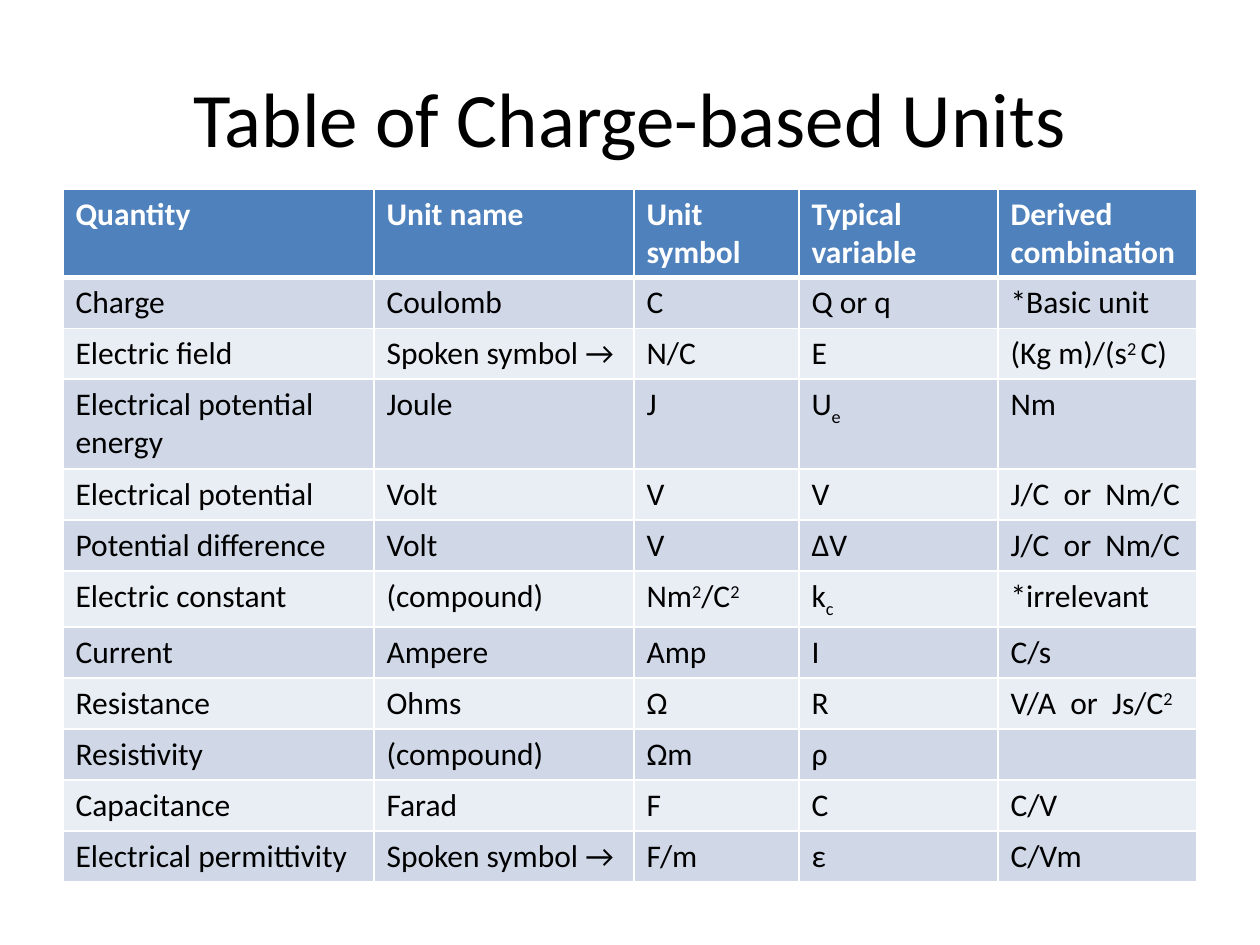
from pptx import Presentation
from pptx.dml.color import RGBColor
from pptx.enum.text import MSO_ANCHOR as Anchor, PP_ALIGN as Align
from pptx.oxml.ns import qn
from pptx.util import Pt
from lxml.etree import SubElement

PX = 914400 // 126
WHITE, BLACK, BLUE = "FFFFFF", "000000", "4F81BD"
BANDS = ("D0D8E8", "E9EDF4")
BASELINES = {"^": "30000", "_": "-25000"}

COLUMN_WIDTHS = (311, 260, 165, 199, 199)
ROW_HEIGHT = 51
TALL_ROWS = {0: 88, 3: 90, 6: 56}
UNITS = (
    ("Quantity", "Unit name", "Unit symbol", "Typical variable", "Derived combination"),
    ("Charge", "Coulomb", "C", "Q or q", "*Basic unit"),
    ("Electric field", "Spoken symbol →", "N/C", "E", "(Kg m)/(s|^2 |C)"),
    ("Electrical potential energy", "Joule", "J", "U|_e", "Nm"),
    ("Electrical potential", "Volt", "V", "V", "J/C  or  Nm/C"),
    ("Potential difference", "Volt", "V", "ΔV", "J/C  or  Nm/C"),
    ("Electric constant", "(compound)", "Nm|^2|/C|^2", "k|_c", "*irrelevant"),
    ("Current", "Ampere", "Amp", "I", "C/s"),
    ("Resistance", "Ohms", "Ω", "R", "V/A  or  Js/C|^2"),
    ("Resistivity", "(compound)", "Ωm", "ρ", ""),
    ("Capacitance", "Farad", "F", "C", "C/V"),
    ("Electrical permittivity", "Spoken symbol →", "F/m", "ε", "C/Vm"),
)


def color(value):
    return RGBColor.from_string(value)


def write_text(frame, text, size=18, fill=BLACK, bold=False, align=Align.LEFT, font="Calibri"):
    paragraph = frame.paragraphs[0]
    paragraph.alignment = align
    for piece in filter(None, text.split("|")):
        run = paragraph.add_run()
        run.font.name, run.font.size, run.font.bold = font, Pt(size), bold
        run.font.color.rgb = color(fill)
        baseline = BASELINES.get(piece[0])
        run.text = piece[1:] if baseline else piece
        if baseline:
            run.font._element.set("baseline", baseline)


def set_border(cell, side, width):
    line = SubElement(cell._tc.get_or_add_tcPr(), qn(f"a:ln{side}"), w=str(Pt(width)))
    fill = SubElement(line, qn("a:solidFill"))
    SubElement(fill, qn("a:srgbClr"), val=WHITE)


class SlideBuilder:
    def __init__(self, slide):
        self.slide = slide

    def title(self, text, *box):
        shape = self.slide.shapes.add_textbox(*(value * PX for value in box))
        frame = shape.text_frame
        frame.word_wrap = True
        frame.vertical_anchor = Anchor.MIDDLE
        write_text(frame, text, size=44, align=Align.CENTER)

    def table(self, rows, left, top, widths, heights):
        box = (left, top, sum(widths), sum(heights))
        shape = self.slide.shapes.add_table(len(rows), len(widths), *(value * PX for value in box))
        table = shape.table
        for column, width in zip(table.columns, widths):
            column.width = width * PX
        for index, (row, height) in enumerate(zip(table.rows, heights)):
            row.height = height * PX
            for cell, text in zip(row.cells, rows[index]):
                self.cell(cell, text, index)

    def cell(self, cell, text, row):
        header = row == 0
        for side in "LRTB":
            under_header = (row, side) in ((0, "B"), (1, "T"))
            set_border(cell, side, 3 if under_header else 1)
        cell.fill.solid()
        cell.fill.fore_color.rgb = color(BLUE if header else BANDS[(row - 1) % 2])
        write_text(cell.text_frame, text, fill=WHITE if header else BLACK, bold=header)


def main():
    presentation = Presentation()
    presentation.slide_width, presentation.slide_height = 1260 * PX, 945 * PX
    builder = SlideBuilder(presentation.slides.add_slide(presentation.slide_layouts[6]))
    builder.title("Table of Charge-based Units", 63, 38, 1134, 158)
    heights = [TALL_ROWS.get(index, ROW_HEIGHT) for index in range(len(UNITS))]
    builder.table(UNITS, 63, 189, COLUMN_WIDTHS, heights)
    presentation.save("out.pptx")


if __name__ == "__main__":
    main()
